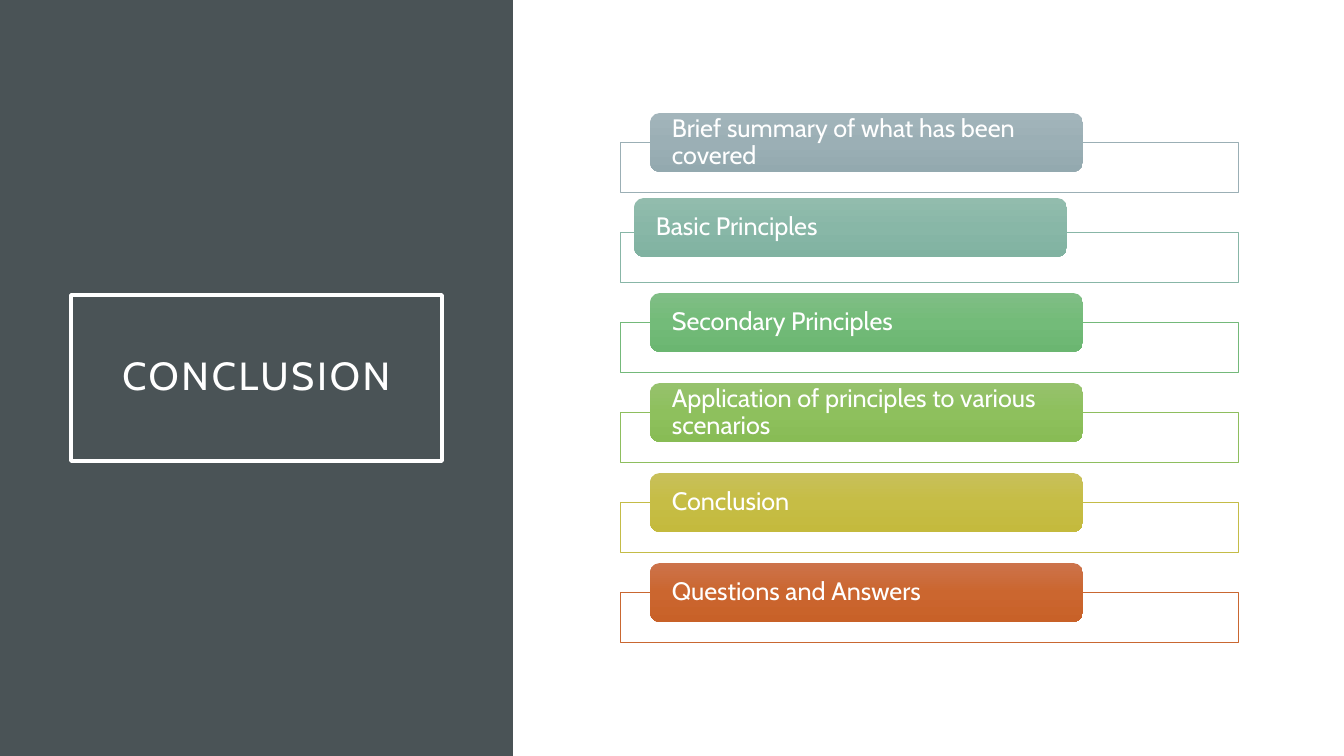
"""Builds the conclusion slide: a dark title panel beside six labelled topic bars."""
import copy
from dataclasses import dataclass

import pptx
import pptx.dml.color
import pptx.enum.shapes
import pptx.enum.text
import pptx.oxml
import pptx.oxml.ns
import pptx.util

HEADING = "CONCLUSION"
TOPICS = [
    ("Brief summary of what has been covered", "9BAFB5", ("A3B5BB", "9BAFB5", "93A9AF"), (0, 0)),
    ("Basic Principles", "88B6A7", ("92BCAD", "88B7A7", "80B2A1"), (-16, -5)),
    ("Secondary Principles", "74B97A", ("80BE85", "73BB79", "6BB671"), (0, 0)),
    ("Application of principles to various scenarios", "8EBE5E", ("96C26D", "8EC05D", "88BC55"), (0, 0)),
    ("Conclusion", "C4BC47", ("C8C05A", "C6BD45", "C4BA3D"), (0, 0)),
    ("Questions and Answers", "C96731", ("CC734B", "CB662F", "C86128"), (0, 0)),
]

SLIDE = (1344, 756)
PANEL = (0, 0, 513, 756)
TITLE = (71, 295, 371, 166)
FRAME = (620, 142, 618, 50)
LABEL = (650, 113, 433, 59)
PITCH = 90


@dataclass(frozen=True)
class Theme:
    font: str = "Cabin"
    white: str = "FFFFFF"
    panel: str = "4A5356"
    heading_size: int = 28
    label_size: int = 18


THEME = Theme()
SHAPES = pptx.enum.shapes.MSO_SHAPE
ALIGN = pptx.enum.text.PP_ALIGN


def px(length):
    return pptx.util.Emu(round(length * 914400 / 100.8))


def rgb(code):
    return pptx.dml.color.RGBColor.from_string(code)


def assign(target, values):
    for name, value in values.items():
        setattr(target, name, value)


def place(shape, box):
    assign(shape, dict(zip(("left", "top", "width", "height"), map(px, box))))


def add_box(slide, kind, box):
    shape = slide.shapes.add_shape(kind, *map(px, box))
    shape.shadow.inherit = False
    shape.line.fill.background()
    return shape


def fill_solid(shape, color):
    shape.fill.solid()
    shape.fill.fore_color.rgb = rgb(color)


def outline(shape, color, points):
    shape.line.color.rgb = rgb(color)
    shape.line.width = pptx.util.Pt(points)


def fill_gradient(shape, colors):
    shape.fill.gradient()
    shape.fill.gradient_angle = 270
    first_stop = shape._element.spPr.find(".//" + pptx.oxml.ns.qn("a:gs"))
    first_stop.addnext(copy.deepcopy(first_stop))
    for position, (stop, color) in enumerate(zip(shape.fill.gradient_stops, colors)):
        stop.position = position / 2
        stop.color.rgb = rgb(color)


def write(shape, text, size, align, side, edge):
    frame = shape.text_frame
    frame.text = text
    assign(frame, {
        "word_wrap": True,
        "auto_size": pptx.enum.text.MSO_AUTO_SIZE.NONE,
        "vertical_anchor": pptx.enum.text.MSO_ANCHOR.MIDDLE,
        "margin_left": px(side), "margin_right": px(side),
        "margin_top": px(edge), "margin_bottom": px(edge),
    })
    paragraph = frame.paragraphs[0]
    assign(paragraph, {"alignment": align, "line_spacing": 0.9})
    run = paragraph.runs[0]
    assign(run.font, {"name": THEME.font, "size": pptx.util.Pt(size)})
    run.font.color.rgb = rgb(THEME.white)
    return run


def add_heading(slide):
    panel = add_box(slide, SHAPES.RECTANGLE, PANEL)
    fill_solid(panel, THEME.panel)
    heading = slide.shapes.title
    heading._element.addprevious(panel._element)
    place(heading, TITLE)
    outline(heading, THEME.white, 2.5)
    run = write(heading, HEADING, THEME.heading_size, ALIGN.CENTER, 20, 20)
    run._r.get_or_add_rPr().set("spc", "200")


def add_topic(slide, row, topic):
    text, line_color, gradient, (shift_x, shift_y) = topic
    left, top, width, height = FRAME
    frame = add_box(slide, SHAPES.RECTANGLE, (left, top + row * PITCH, width, height))
    fill_solid(frame, THEME.white)
    frame_color = frame._element.spPr.find(".//" + pptx.oxml.ns.qn("a:srgbClr"))
    frame_color.append(pptx.oxml.parse_xml(
        f'<a:alpha {pptx.oxml.ns.nsdecls("a")} val="90000"/>'))
    outline(frame, line_color, 0.5)

    left, top, width, height = LABEL
    label = add_box(slide, SHAPES.ROUNDED_RECTANGLE,
                    (left + shift_x, top + row * PITCH + shift_y, width, height))
    fill_gradient(label, gradient)
    write(label, text, THEME.label_size, ALIGN.LEFT, 19, 3)


def main():
    deck = pptx.Presentation()
    deck.slide_width, deck.slide_height = map(px, SLIDE)
    slide = deck.slides.add_slide(deck.slide_layouts.get_by_name("Title Only"))
    add_heading(slide)
    for row, topic in enumerate(TOPICS):
        add_topic(slide, row, topic)
    deck.save("out.pptx")


if __name__ == "__main__":
    main()
